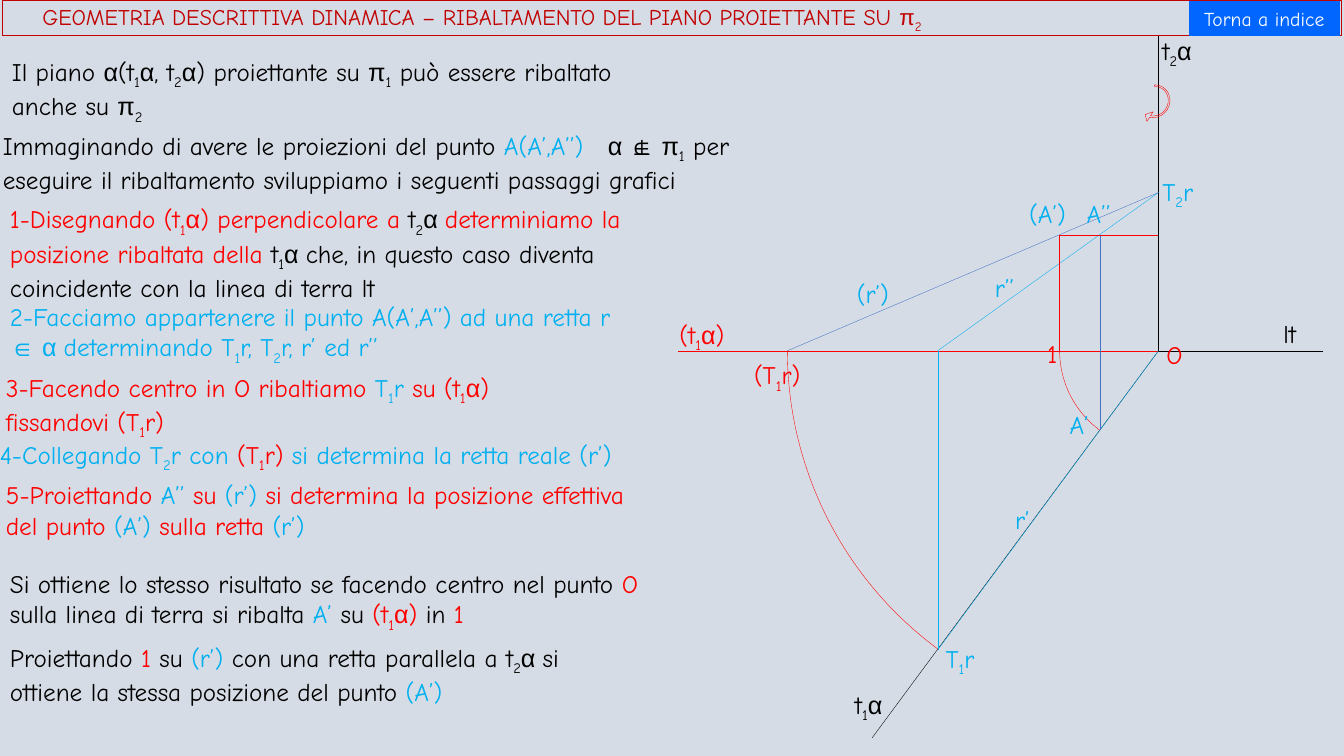
"""Builds the slide on turning a projecting plane over onto π2."""
from dataclasses import dataclass

from lxml import etree
from pptx import Presentation
from pptx.dml.color import RGBColor
from pptx.enum.shapes import MSO_CONNECTOR as Link, MSO_SHAPE as Kind
from pptx.enum.text import MSO_ANCHOR as Anchor, MSO_AUTO_SIZE as Fit, PP_ALIGN as Align
from pptx.oxml.ns import qn
from pptx.util import Inches, Pt


@dataclass(frozen=True)
class Theme:
    """Colours by key letter, fonts, type sizes and line width."""
    hues = {"k": "000000", "r": "FF0000", "b": "00B0F0", "n": "4472C4",
            "c": "C00000", "w": "FFFFFF", "u": "0066FF", "g": "D6DCE5"}
    face: str = "Comic Neue"
    greek: str = "Arial"
    body: int = 18
    head: int = 16
    link: int = 14
    line: float = 0.25

    def rgb(self, key):
        return RGBColor.from_string(self.hues[key])


LOOK = Theme()
CELL = 0.1
GREEK = "απ∈⊥"

# Markup: ^x switches to colour x, _n sets n as a subscript.
TITLE = "^cGEOMETRIA DESCRITTIVA DINAMICA – RIBALTAMENTO DEL PIANO PROIETTANTE SU π_2"
BUTTON = "^wTorna a indice"

NOTES = [
    (0.2, 5.1, 66.2, 7.1, "^kIl piano α(t_1α, t_2α) proiettante su π_1 può essere "
     "ribaltato anche su π_2"),
    (-0.7, 12.4, 77.5, 6.3, "^kImmaginando di avere le proiezioni del punto "
     "^bA(A’,A’’)\t^kα ⊥ π_1 per eseguire il ribaltamento sviluppiamo i seguenti "
     "passaggi grafici"),
    (61.4, 12.4, 3, 2.2, "^k∈"),
    (0, 19.7, 69.3, 10.1, "^r1-Disegnando (t_1α) perpendicolare a ^kt_2α "
     "^rdeterminiamo la posizione ribaltata della ^kt_1α che, in questo caso "
     "diventa coincidente con la linea di terra lt"),
    (0, 29.4, 64.2, 7.1, "^b2-Facciamo appartenere il punto A(A’,A’’) ad una retta r "
     "∈ α determinando T_1r, T_2r, r’ ed r’’"),
    (-0.4, 36.4, 55.6, 7.1, "^r3-Facendo centro in O ribaltiamo ^bT_1r "
     "^rsu (t_1α) fissandovi (T_1r)"),
    (-1, 43.1, 71.3, 4, "^b4-Collegando T_2r con ^r(T_1r) "
     "^bsi determina la retta reale (r’)"),
    (-0.4, 47.1, 65.8, 7.1, "^r5-Proiettando ^bA’’ ^rsu ^b(r’) ^rsi determina la "
     "posizione effettiva del punto ^b(A’) ^rsulla retta ^b(r’)"),
    (0, 55.9, 64.8, 7.1, "^kSi ottiene lo stesso risultato se facendo centro nel punto "
     "^rO ^ksulla linea di terra si ribalta ^bA’ ^ksu ^r(t_1α) ^kin ^r1"),
    (0, 63.2, 62.8, 7.1, "^kProiettando ^r1 ^ksu ^b(r’) ^kcon una retta parallela a "
     "t_2α si ottiene la stessa posizione del punto ^b(A’)"),
]

LABELS = [
    (83.8, 67.9, 5.8, "^kt_1α"), (114.3, 3, 5.8, "^kt_2α"), (126.3, 31.1, 5.8, "^klt"),
    (92.8, 63.3, 6.4, "^bT_1r"), (73.8, 35.2, 7.9, "^r(T_1r)"),
    (66.4, 31.2, 7.9, "^r(t_1α)"), (114.3, 17, 6.4, "^bT_2r"),
    (84, 27.1, 7, "^b(r’)"), (97.7, 26.5, 5.8, "^br’’"), (99.7, 49.5, 5.8, "^br’"),
    (106.8, 19.2, 5.8, "^bA’’"), (105.1, 40.1, 5.8, "^bA’"),
    (101.1, 19.2, 6.7, "^b(A’)"), (114.7, 33.2, 5.8, "^rO"), (102.9, 33.1, 3.7, "^r1"),
]

OX, OY = 114.9, 34.8
WIDE, NEAR = 36.8, 9.8
FOOT, DROP, RISE, TOP = 93, 109.1, 23.3, 19.1
SWEEP = (126.5, 180)
LINES = [
    ("k", (90.2, OY), (131.2, OY)), ("k", (OX, 3.6), (OX, OY)),
    ("k", (OX, OY), (86.5, 73.2)), ("r", (OX, OY), (67.2, OY)),
    ("b", (FOOT, OY), (FOOT, 64.5)), ("b", (FOOT, OY), (OX, TOP)),
    ("b", (OX, OY), (FOOT, 64.5)), ("n", (DROP, RISE), (DROP, 42.7)),
    ("r", (OX - NEAR, RISE), (OX, RISE)), ("n", (OX - WIDE, OY), (OX, TOP)),
    ("r", (OX - NEAR, RISE), (OX - NEAR, OY)),
]
TURN = (112.3, 8, 4.3, 4.1)
BEND = (0.04, 11.42, 205.2, 89.91, 0.14)


def grid(*cells):
    return [Inches(cell * CELL) for cell in cells]


def split(text):
    """Cuts marked text into (colour, face, low, words) runs."""
    runs = []
    for part in text.split("^")[1:]:
        hue, face, low = part[0], LOOK.face, False
        for char in part[1:]:
            if char == "_":
                low = True
                continue
            if char != " ":
                face = LOOK.greek if char in GREEK else LOOK.face
            key = (hue, face, low)
            if runs and runs[-1][0] == key:
                runs[-1][1].append(char)
            else:
                runs.append((key, [char]))
            low = False
    return [(*key, "".join(chars)) for key, chars in runs]


def write(frame, text, size):
    frame.word_wrap = True
    para = frame.paragraphs[0]
    for hue, face, low, words in split(text):
        run = para.add_run()
        run.text = words
        font = run.font
        font.name, font.size, font.bold = face, Pt(size), False
        font.color.rgb = LOOK.rgb(hue)
        if low:
            run._r.get_or_add_rPr().set("baseline", "-25000")
    if "\t" in text:
        tabs = etree.SubElement(para._p.get_or_add_pPr(), qn("a:tabLst"))
        etree.SubElement(tabs, qn("a:tab"), pos=str(Inches(6)), algn="l")
    return para


def note(slide, left, top, wide, high, text):
    frame = slide.shapes.add_textbox(*grid(left, top, wide, high)).text_frame
    write(frame, text, LOOK.body)
    frame.auto_size = Fit.SHAPE_TO_FIT_TEXT


def line(slide, hue, start, end):
    link = slide.shapes.add_connector(Link.STRAIGHT, *grid(*start, *end))
    link.line.color.rgb = LOOK.rgb(hue)
    link.line.width = Pt(LOOK.line)
    etree.SubElement(link._element.spPr, qn("a:effectLst"))


def curve(slide, kind, box, bends):
    shape = slide.shapes.add_shape(kind, *grid(*box))
    shape.shadow.inherit = False
    shape.fill.background()
    shape.line.color.rgb = LOOK.rgb("r")
    shape.line.width = Pt(LOOK.line)
    for spot, bend in enumerate(bends):
        shape.adjustments[spot] = bend
    return shape


def header(slide):
    title = slide.shapes.title
    title.left, title.top, title.width, title.height = grid(0.2, 0, 132.8, 3.5)
    title.line.color.rgb = LOOK.rgb("c")
    title.line.width = Pt(LOOK.line)
    frame = title.text_frame
    frame.auto_size, frame.vertical_anchor = Fit.NONE, Anchor.MIDDLE
    frame.margin_left = Inches(0.4)
    para = write(frame, TITLE, LOOK.head)
    para.alignment, para.line_spacing = Align.LEFT, 0.9

    button = slide.shapes.add_shape(Kind.ACTION_BUTTON_CUSTOM, *grid(117.9, 0.1, 15, 3.5))
    button.shadow.inherit = False
    button.fill.solid()
    button.fill.fore_color.rgb = LOOK.rgb("u")
    button.line.fill.background()
    button.text_frame.vertical_anchor = Anchor.MIDDLE
    write(button.text_frame, BUTTON, LOOK.link).alignment = Align.CENTER


def main():
    deck = Presentation()
    deck.slide_width, deck.slide_height = Inches(13.33), Inches(7.5)
    slide = deck.slides.add_slide(deck.slide_layouts[5])
    slide.background.fill.solid()
    slide.background.fill.fore_color.rgb = LOOK.rgb("g")
    for item in LINES:
        line(slide, *item)
    for reach in (WIDE, NEAR):
        box = (OX - reach, OY - reach, 2 * reach, 2 * reach)
        curve(slide, Kind.ARC, box, [angle * 0.6 for angle in SWEEP])
    curve(slide, Kind.CIRCULAR_ARROW, TURN, BEND).rotation = 122.5
    for left, top, wide, text in LABELS:
        note(slide, left, top, wide, 4, text)
    for item in NOTES:
        note(slide, *item)
    header(slide)
    deck.save("out.pptx")


if __name__ == "__main__":
    main()
